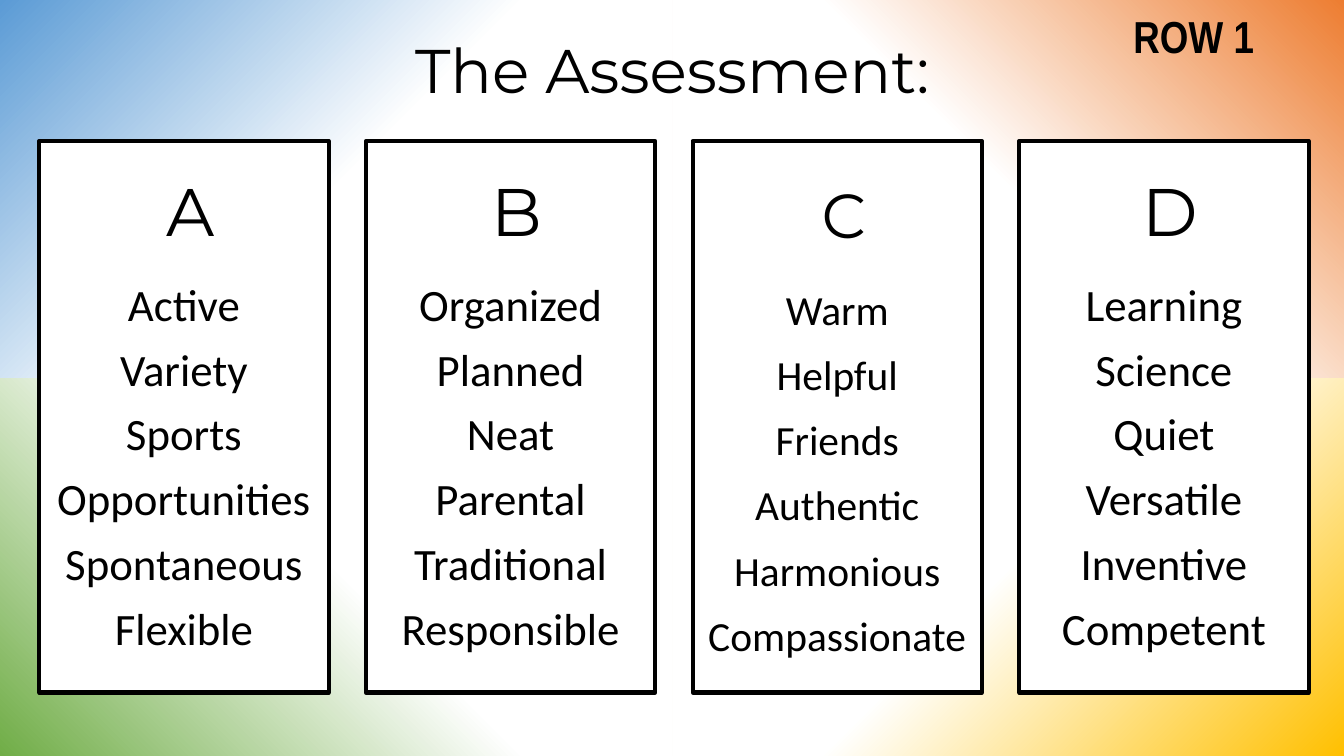
from pptx import Presentation
from pptx.dml.color import RGBColor
from pptx.enum.shapes import MSO_SHAPE
from pptx.enum.text import MSO_ANCHOR, PP_ALIGN
from pptx.util import Inches, Pt

COLORS = {
    "ink": "000000",
    "paper": "FFFFFF",
    "blue": "5B9BD5",
    "orange": "ED7D31",
    "green": "70AD47",
    "gold": "FFC000",
}

CORNERS = [
    ("blue", 0, 0, 315),
    ("orange", 1, 0, 225),
    ("green", 0, 1, 45),
    ("gold", 1, 1, 135),
]

CARDS = [
    ("A", ["Active", "Variety", "Sports", "Opportunities", "Spontaneous", "Flexible"], 1),
    ("B", ["Organized", "Planned", "Neat", "Parental", "Traditional", "Responsible"], 1),
    ("C", ["Warm", "Helpful", "Friends", "Authentic", "Harmonious", "Compassionate"], 0.925),
    ("D", ["Learning", "Science", "Quiet", "Versatile", "Inventive", "Competent"], 1),
]


class AssessmentSlide:
    heading_font = "Montserrat"
    body_font = "Calibri"
    label_font = "Arial Narrow"

    def __init__(self, deck):
        self.page = deck.slides.add_slide(deck.slide_layouts[5])
        background = self.page.background.fill
        background.solid()
        background.fore_color.rgb = self.color("ink")

    def color(self, name):
        return RGBColor.from_string(COLORS[name])

    def format(self, para, text, font, size, spacing, bold=False):
        para.text = text
        para.alignment = PP_ALIGN.CENTER
        para.line_spacing = spacing
        para.font.name = font
        para.font.size = Pt(size)
        para.font.bold = bold
        para.font.color.rgb = self.color("ink")

    def corners(self):
        group = self.page.shapes.add_group_shape()
        width, height = 6.67, 3.75
        for name, column, row, angle in CORNERS:
            corner = group.shapes.add_shape(
                MSO_SHAPE.RECTANGLE, Inches(column * width), Inches(row * height),
                Inches(width), Inches(height))
            corner.shadow.inherit = False
            corner.line.fill.background()
            corner.fill.gradient()
            corner.fill.gradient_angle = angle
            start, end = corner.fill.gradient_stops
            start.color.rgb, start.position = self.color(name), 0
            end.color.rgb, end.position = self.color("paper"), 0.5

    def title(self, text):
        title = self.page.shapes.title
        title.element.getparent().append(title.element)
        title.left, title.top = Inches(0.92), Inches(0)
        title.width, title.height = Inches(11.5), Inches(1.45)
        title.text_frame.vertical_anchor = MSO_ANCHOR.MIDDLE
        self.format(title.text_frame.paragraphs[0], text, self.heading_font, 44, 0.9)

    def card(self, left, letter, words, scale):
        card = self.page.shapes.add_shape(
            MSO_SHAPE.RECTANGLE, Inches(left), Inches(1.4), Inches(2.87), Inches(5.47))
        card.shadow.inherit = False
        card.fill.solid()
        card.fill.fore_color.rgb = self.color("paper")
        card.line.color.rgb = self.color("ink")
        card.line.width = Pt(3)
        frame = card.text_frame
        frame.word_wrap = True
        frame.vertical_anchor = MSO_ANCHOR.TOP
        frame.margin_top = Inches(0.43)
        extra = 0 if scale == 1 else 0.1
        heading = frame.paragraphs[0]
        heading._p.get_or_add_pPr().set("marL", str(Inches(0.13)))
        self.format(heading, letter, self.heading_font, 48 * scale, 0.8 + extra)
        heading.space_after = Pt(12)
        for word in words:
            para = frame.add_paragraph()
            self.format(para, word, self.body_font, 32 * scale, 1.1 + extra)
            para.space_before = Pt(4)

    def label(self, text):
        box = self.page.shapes.add_textbox(
            Inches(10.35), Inches(0), Inches(2.98), Inches(0.78))
        frame = box.text_frame
        frame.word_wrap = True
        frame.vertical_anchor = MSO_ANCHOR.MIDDLE
        self.format(frame.paragraphs[0], text, self.label_font, 32, 0.9, bold=True)


def main():
    deck = Presentation()
    deck.slide_width, deck.slide_height = Inches(13.33), Inches(7.5)
    slide = AssessmentSlide(deck)
    slide.corners()
    slide.title("The Assessment:")
    for index, (letter, words, scale) in enumerate(CARDS):
        slide.card(0.39 + index * 3.24, letter, words, scale)
    slide.label("ROW 1")
    deck.save("out.pptx")


if __name__ == "__main__":
    main()
